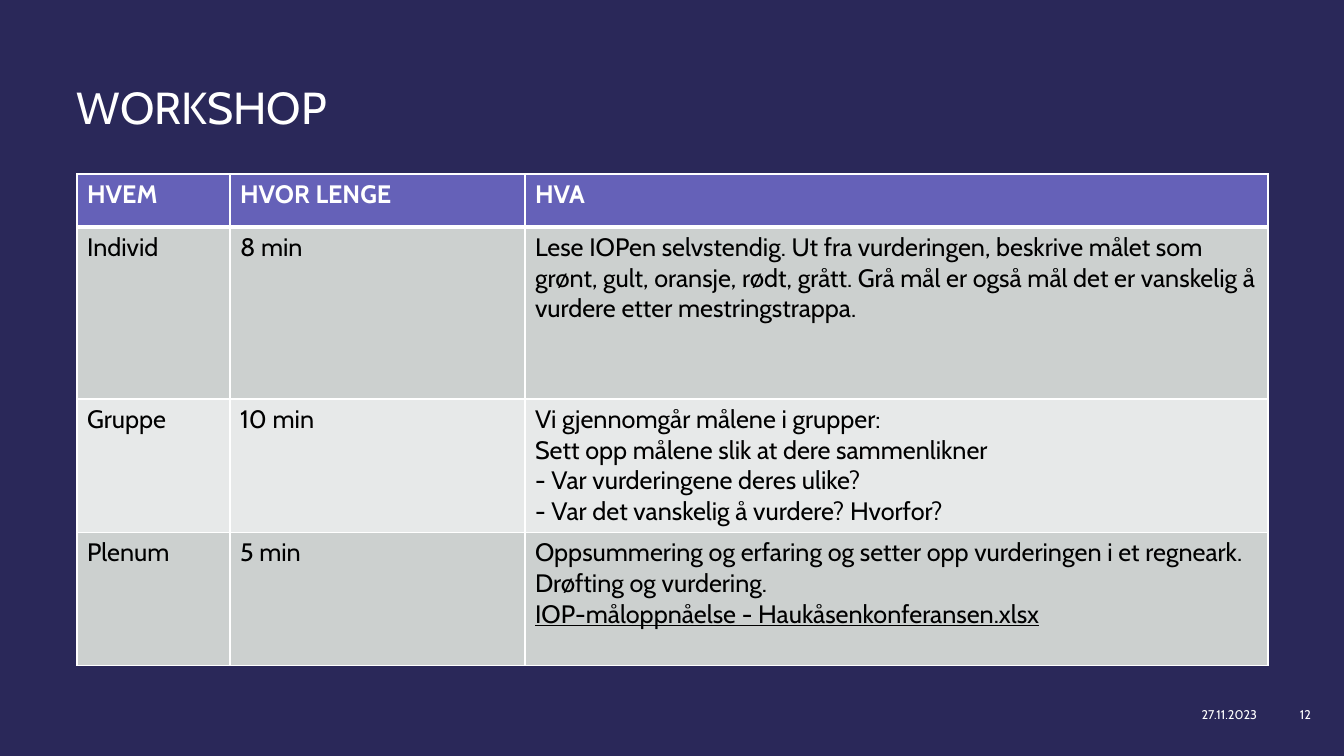
"""Build the workshop slide with its table of tasks."""
from lxml import etree
from pptx import Presentation
from pptx import util as u
from pptx.dml.color import RGBColor
from pptx.enum import text
from pptx.oxml import ns

SCALE = 12192000 / 1344
FONT = "Cabin"
COLORS = {
    "back": "2A2859",
    "head": "6561B8",
    "dark": "CCD0CF",
    "light": "E7E9E9",
    "white": "FFFFFF",
    "black": "000000",
}
COLS = [153, 295, 743]
ROWS = [53, 172, 133, 133]
LINK = "IOP-måloppnåelse - Haukåsenkonferansen.xlsx"
PLAN = [
    ("HVEM", "HVOR LENGE", "HVA"),
    ("Individ", "8 min",
     "Lese IOPen selvstendig. Ut fra vurderingen, beskrive målet som "
     "grønt, gult, oransje, rødt, grått. Grå mål er også mål det er "
     "vanskelig å vurdere etter mestringstrappa."),
    ("Gruppe", "10 min",
     "Vi gjennomgår målene i grupper:\n"
     "Sett opp målene slik at dere sammenlikner\n"
     "- Var vurderingene deres ulike?\n"
     "- Var det vanskelig å vurdere? Hvorfor?"),
    ("Plenum", "5 min",
     "Oppsummering og erfaring og setter opp vurderingen i et regneark. "
     "Drøfting og vurdering.\n" + LINK),
]


def px(num):
    return u.Emu(round(num * SCALE))


def paint(fill, name):
    fill.solid()
    fill.fore_color.rgb = RGBColor.from_string(COLORS[name])


def style(para, size, color, bold=False):
    font = para.font
    font.name, font.size, font.bold = FONT, u.Pt(size), bold
    font.color.rgb = RGBColor.from_string(COLORS[color])


def edge(cell, base):
    props = cell._tc.get_or_add_tcPr()
    for side, width in zip("LRTB", (1, 1, 1, base)):
        line = etree.SubElement(props, ns.qn("a:ln" + side), w=str(u.Pt(width)))
        fill = etree.SubElement(line, ns.qn("a:solidFill"))
        etree.SubElement(fill, ns.qn("a:srgbClr"), val=COLORS["white"])


def add_title(slide, words):
    title = slide.shapes.title
    title.left, title.top, title.width, title.height = map(px, (77, 80, 1044, 144))
    frame = title.text_frame
    frame.text = words
    frame.auto_size = text.MSO_AUTO_SIZE.NONE
    frame.vertical_anchor = text.MSO_ANCHOR.TOP
    frame.margin_left = frame.margin_right = 0
    frame.margin_top = frame.margin_bottom = 0
    para = frame.paragraphs[0]
    para.alignment = text.PP_ALIGN.LEFT
    style(para, 32, "white")


def fill_cell(cell, words, row):
    head = row == 0
    edge(cell, 3 if head else 1)
    paint(cell.fill, "head" if head else "dark" if row % 2 else "light")
    cell.text = words
    for para in cell.text_frame.paragraphs:
        style(para, 18, "white" if head else "black", head)
        if para.text == LINK:
            para.font.underline = True


def add_plan(slide):
    box = map(px, (77, 174, sum(COLS), sum(ROWS)))
    table = slide.shapes.add_table(len(ROWS), len(COLS), *box).table
    for col, width in zip(table.columns, COLS):
        col.width = px(width)
    for row, height in zip(table.rows, ROWS):
        row.height = px(height)
    for row, line in enumerate(PLAN):
        for col, words in enumerate(line):
            fill_cell(table.cell(row, col), words, row)


def add_note(slide, left, width, words, align):
    frame = slide.shapes.add_textbox(*map(px, (left, 694, width, 40))).text_frame
    frame.word_wrap = True
    frame.vertical_anchor = text.MSO_ANCHOR.MIDDLE
    frame.text = words
    para = frame.paragraphs[0]
    para.alignment = align
    style(para, 9, "white")


def main():
    deck = Presentation()
    deck.slide_width, deck.slide_height = px(1344), px(756)
    slide = deck.slides.add_slide(deck.slide_layouts[5])
    paint(slide.background.fill, "back")
    add_title(slide, "WORKSHOP")
    add_plan(slide)
    add_note(slide, 1120, 147, "27.11.2023", text.PP_ALIGN.RIGHT)
    add_note(slide, 1267, 77, "12", text.PP_ALIGN.CENTER)
    deck.save("out.pptx")


if __name__ == "__main__":
    main()
